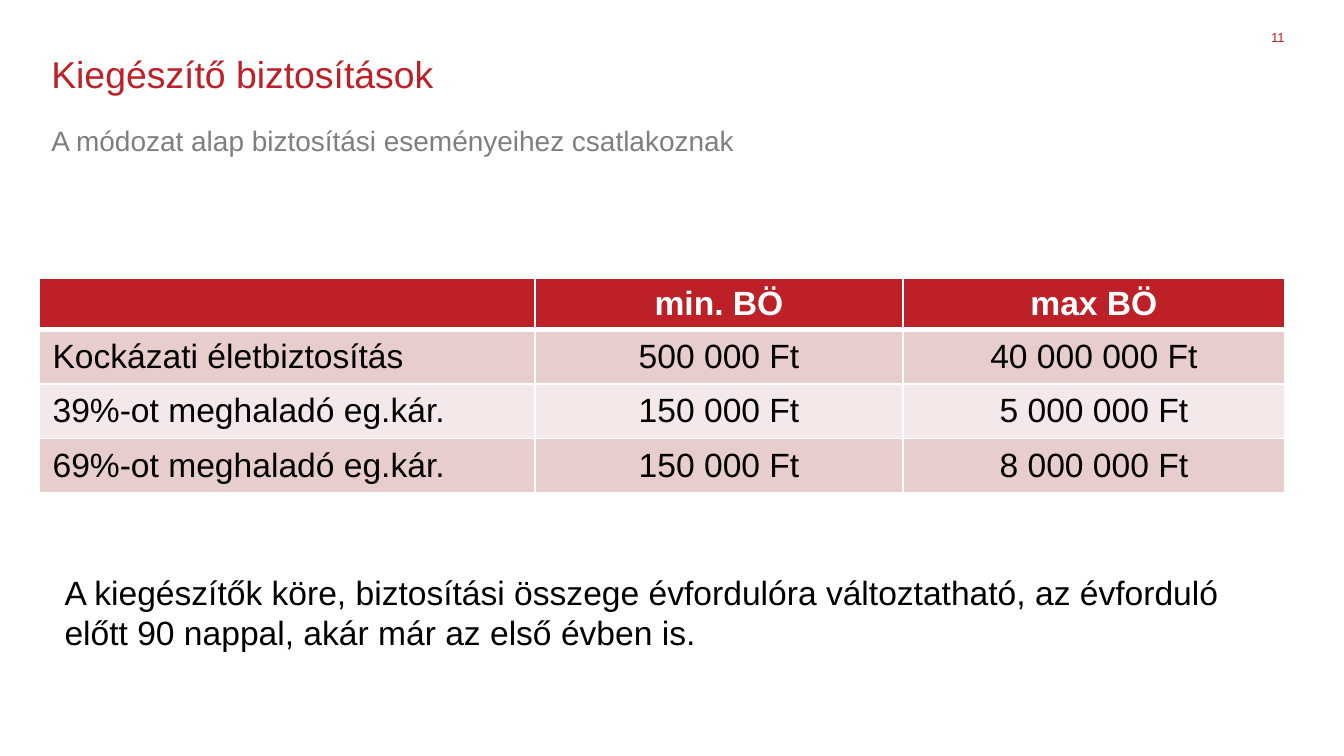
from lxml.etree import SubElement
from pptx import Presentation
from pptx.dml.color import RGBColor
from pptx.enum.text import MSO_ANCHOR, PP_ALIGN
from pptx.oxml.ns import qn
from pptx.util import Cm, Pt

RED = RGBColor(0xBD, 0x20, 0x27)
GREY = RGBColor(0x7F, 0x7F, 0x7F)
BLACK = RGBColor(0, 0, 0)
WHITE = RGBColor(0xFF, 0xFF, 0xFF)
ROSE = RGBColor(0xE8, 0xCD, 0xCD)
PALE = RGBColor(0xF4, 0xE8, 0xE8)


class Page:
    font = "Arial"

    def __init__(self, slide):
        self.slide = slide

    def style(self, frame, size, color, align=PP_ALIGN.LEFT, bold=False):
        for para in frame.paragraphs:
            para.alignment = align
            for run in para.runs:
                run.font.name = self.font
                run.font.size = Pt(size)
                run.font.bold = bold
                run.font.color.rgb = color

    def text(self, words, box, size, color, align=PP_ALIGN.LEFT, pad=(0, 0)):
        frame = self.slide.shapes.add_textbox(*map(Cm, box)).text_frame
        frame.word_wrap = True
        frame.margin_left = frame.margin_right = Cm(pad[0])
        frame.margin_top = frame.margin_bottom = Cm(pad[1])
        frame.text = words
        self.style(frame, size, color, align)

    def edge(self, cell, base):
        # Borders must come before the fill in the cell properties
        props = cell._tc.get_or_add_tcPr()
        for side in ("lnL", "lnR", "lnT", "lnB"):
            width = base if side == "lnB" else 1
            line = SubElement(props, qn(f"a:{side}"), w=str(Pt(width)))
            fill = SubElement(line, qn("a:solidFill"))
            SubElement(fill, qn("a:srgbClr"), val=str(WHITE))

    def table(self, data, left, top, cols, rows):
        shape = self.slide.shapes.add_table(
            len(rows), len(cols), Cm(left), Cm(top), Cm(sum(cols)), Cm(sum(rows)))
        grid = shape.table
        for col, width in zip(grid.columns, cols):
            col.width = Cm(width)
        for i, (row, height) in enumerate(zip(grid.rows, rows)):
            row.height = Cm(height)
            head = i == 0
            for j, cell in enumerate(row.cells):
                cell.text_frame.text = data[i][j]
                cell.margin_top = cell.margin_bottom = Cm(0.1)
                cell.vertical_anchor = MSO_ANCHOR.MIDDLE
                self.edge(cell, 3 if head else 1)
                cell.fill.solid()
                cell.fill.fore_color.rgb = RED if head else (PALE, ROSE)[i % 2]
                self.style(cell.text_frame, 18, WHITE if head else BLACK,
                           PP_ALIGN.CENTER if j else PP_ALIGN.LEFT, head)


def main():
    deck = Presentation()
    deck.slide_width, deck.slide_height = Cm(25.4), Cm(14.28)
    page = Page(deck.slides.add_slide(deck.slide_layouts[6]))

    # Page number and headings
    page.text("11", (23.72, 0.56, 0.56, 0.38), 7, RED, PP_ALIGN.RIGHT)
    page.text("A módozat alap biztosítási eseményeihez csatlakoznak",
              (0.97, 2.34, 23.29, 0.81), 15, GREY)
    page.text("Kiegészítő biztosítások", (0.97, 0.97, 23.29, 1.3), 20, RED)

    # Limits of the insured sums
    data = [
        ("", "min. BÖ", "max BÖ"),
        ("Kockázati életbiztosítás", "500 000 Ft", "40 000 000 Ft"),
        ("39%-ot meghaladó eg.kár.", "150 000 Ft", "5 000 000 Ft"),
        ("69%-ot meghaladó eg.kár.", "150 000 Ft", "8 000 000 Ft"),
    ]
    page.table(data, 0.74, 5.26, (9.37, 6.96, 7.21), (0.94, 1.03, 1.03, 1.03))

    # Closing remark
    page.text("A kiegészítők köre, biztosítási összege évfordulóra változtatható, "
              "az évforduló előtt 90 nappal, akár már az első évben is.",
              (0.97, 10.67, 23.32, 1.8), 18, BLACK, pad=(0.25, 0.13))

    deck.save("out.pptx")


if __name__ == "__main__":
    main()
